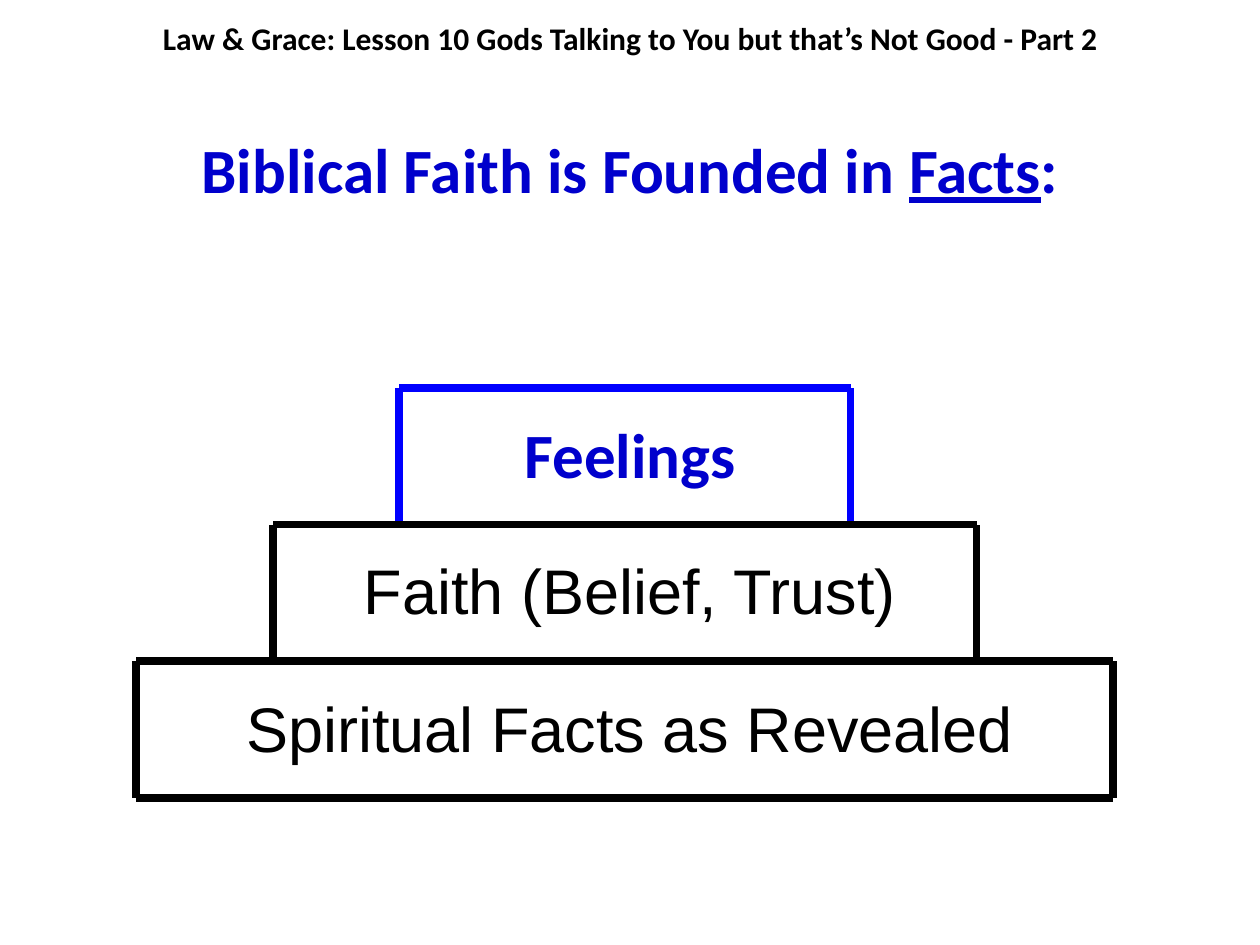
from lxml.etree import SubElement
from pptx import Presentation
from pptx.dml.color import RGBColor
from pptx.enum.shapes import MSO_CONNECTOR
from pptx.enum.text import MSO_ANCHOR, MSO_AUTO_SIZE, PP_ALIGN
from pptx.oxml.ns import qn
from pptx.util import Inches, Pt

BLACK = RGBColor(0x00, 0x00, 0x00)
TEXT_BLUE = RGBColor(0x00, 0x00, 0xCC)
LINE_BLUE = RGBColor(0x00, 0x00, 0xFF)

BASE_Y = 6.33
STEP_HEIGHT = 3.25 / 3
# Left, right and line colour of each step, from the bottom up
STEPS = [(1.08, 8.83, BLACK), (2.17, 7.75, BLACK), (3.17, 6.75, LINE_BLUE)]


class SlideBuilder:
    """Holds the text and line style and the current slide."""

    heading_font = "Calibri"
    label_font = "Arial"
    text_size = 36
    line_width = 4.5

    def __init__(self, slide):
        self.slide = slide

    def fill_text(self, shape, box, runs, font, color, bold=False, size=None,
                  anchor=MSO_ANCHOR.TOP):
        """Place a shape and fill it with centred (text, underlined) runs."""
        shape.left, shape.top, shape.width, shape.height = map(Inches, box)
        text_frame = shape.text_frame
        text_frame.word_wrap = True
        text_frame.auto_size = MSO_AUTO_SIZE.NONE
        text_frame.vertical_anchor = anchor
        paragraph = text_frame.paragraphs[0]
        paragraph.alignment = PP_ALIGN.CENTER
        paragraph.space_before = Pt(0)
        for text, underlined in runs:
            run = paragraph.add_run()
            run.text = text
            run.font.name = font
            run.font.size = Pt(size or self.text_size)
            run.font.bold = bold
            run.font.underline = underlined
            run.font.color.rgb = color
        return paragraph

    def title(self, box, runs):
        self.fill_text(self.slide.shapes.title, box, runs, self.heading_font,
                       TEXT_BLUE, bold=True, anchor=MSO_ANCHOR.MIDDLE)

    def body(self, box, text):
        paragraph = self.fill_text(self.slide.placeholders[1], box,
                                   [(text, False)], self.label_font, BLACK)
        # Plain centred line: no bullet, no indent
        properties = paragraph._p.get_or_add_pPr()
        properties.set("marL", "0")
        properties.set("indent", "0")
        SubElement(properties, qn("a:buNone"))

    def text(self, box, text, font, color, bold=False, size=None):
        shape = self.slide.shapes.add_textbox(*map(Inches, box))
        self.fill_text(shape, box, [(text, False)], font, color, bold, size)

    def line(self, x1, y1, x2, y2, color):
        connector = self.slide.shapes.add_connector(
            MSO_CONNECTOR.STRAIGHT, *map(Inches, (x1, y1, x2, y2)))
        connector.line.color.rgb = color
        connector.line.width = Pt(self.line_width)
        SubElement(connector._element.spPr, qn("a:effectLst"))


def main():
    presentation = Presentation()
    presentation.slide_width = Inches(10)
    presentation.slide_height = Inches(7.5)
    slide = presentation.slides.add_slide(presentation.slide_layouts[1])
    builder = SlideBuilder(slide)

    # Title and the label of the bottom step
    builder.title((0.25, 0.92, 9.5, 0.83),
                  [("Biblical Faith is Founded in ", False), ("Facts", True),
                   (":", False)])
    builder.body((0.5, 5.42, 9, 0.92), "Spiritual Facts as Revealed")

    # Sides of the steps
    for level, (left, right, color) in enumerate(STEPS):
        bottom = BASE_Y - level * STEP_HEIGHT
        for x in (left, right):
            builder.line(x, bottom, x, bottom - STEP_HEIGHT, color)

    # Base line and the top of each step
    left, right, color = STEPS[0]
    builder.line(left, BASE_Y, right, BASE_Y, color)
    for level, (left, right, color) in enumerate(STEPS, start=1):
        top = BASE_Y - level * STEP_HEIGHT
        builder.line(left, top, right, top, color)

    # Labels of the upper steps
    builder.text((0.75, 4.33, 8.5, 0.83), "Faith (Belief, Trust)",
                 builder.label_font, BLACK)
    builder.text((0.75, 3.25, 8.5, 0.83), "Feelings",
                 builder.heading_font, TEXT_BLUE, bold=True)

    # Lesson header
    builder.text((1.17, 0.1, 7.67, 0.4),
                 "Law & Grace: Lesson 10 Gods Talking to You but that’s "
                 "Not Good - Part 2",
                 builder.heading_font, BLACK, bold=True, size=18)

    presentation.save("out.pptx")


if __name__ == "__main__":
    main()
